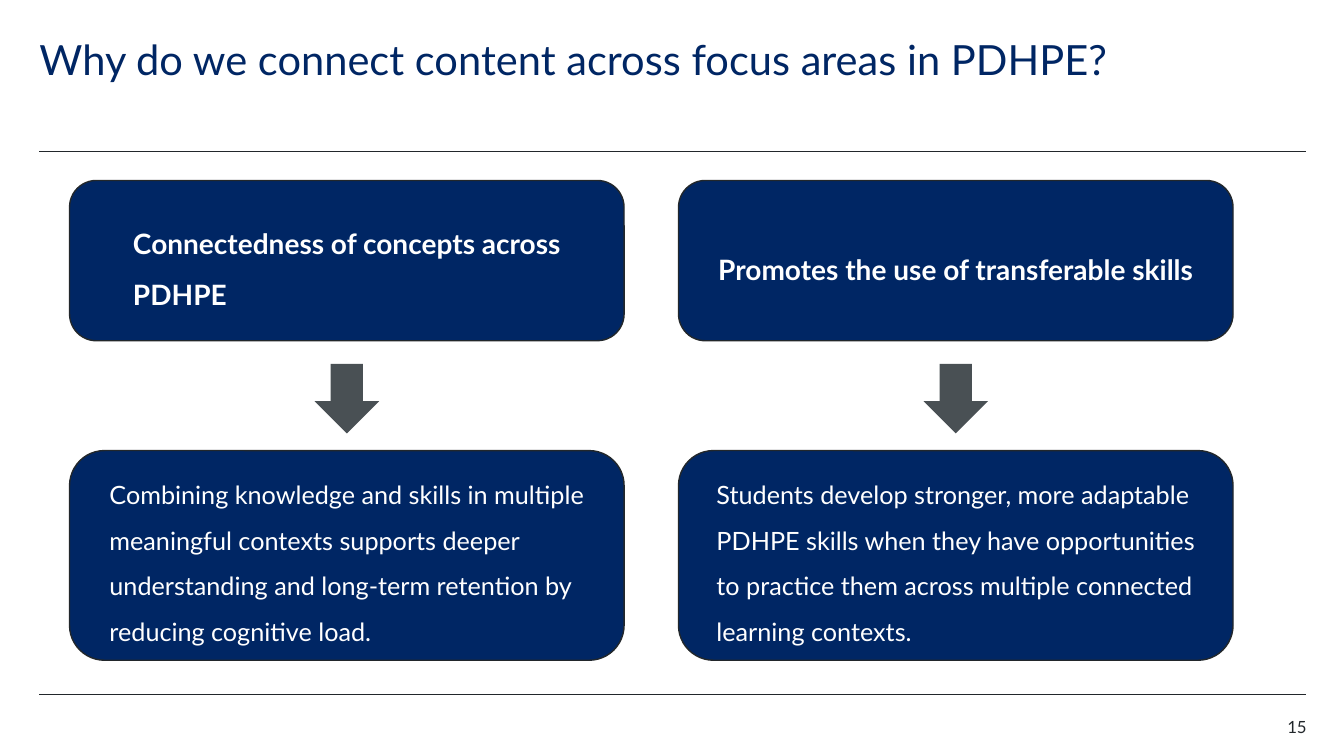
from dataclasses import dataclass

from lxml import etree
from pptx import Presentation
from pptx.dml.color import RGBColor as Rgb
from pptx.enum.shapes import MSO_CONNECTOR as Link, MSO_SHAPE as Kind
from pptx.enum.text import MSO_ANCHOR as Anchor, PP_ALIGN as Align
from pptx.oxml.ns import qn
from pptx.util import Inches, Pt


@dataclass(frozen=True)
class Theme:
    font: str = "Lato"
    navy: str = "002664"
    ink: str = "22272B"
    grey: str = "495054"
    white: str = "FFFFFF"
    title: float = 29.7
    head: float = 20
    body: float = 18
    page: float = 12


def write(frame, text, *, font, size, color, bold=False, align=Align.LEFT,
          space=0.9, after=0, pad=(0, 0), anchor=Anchor.TOP):
    """Fill a text frame with one formatted paragraph."""
    frame.word_wrap = True
    frame.vertical_anchor = anchor
    frame.margin_left = frame.margin_right = Inches(pad[0])
    frame.margin_top = frame.margin_bottom = Inches(pad[1])
    para = frame.paragraphs[0]
    para.alignment = align
    para.line_spacing = space
    para.space_after = Pt(after)
    run = para.add_run()
    run.text = text
    run.font.name = font
    run.font.size = Pt(size)
    run.font.bold = bold
    run.font.color.rgb = Rgb.from_string(color)


class Deck:
    def __init__(self, theme):
        self.theme = theme
        self.file = Presentation()
        self.file.slide_width = Inches(13.33)
        self.file.slide_height = Inches(7.5)
        self.slide = self.file.slides.add_slide(self.file.slide_layouts[6])

    def rule(self, left, right, y):
        line = self.slide.shapes.add_connector(
            Link.STRAIGHT, Inches(left), Inches(y), Inches(right), Inches(y))
        line.line.color.rgb = Rgb.from_string(self.theme.ink)
        line.line.width = Pt(0.5)
        etree.SubElement(line._element.spPr, qn("a:effectLst"))

    def label(self, text, at, **style):
        box = self.slide.shapes.add_textbox(*map(Inches, at))
        write(box.text_frame, text, font=self.theme.font, **style)

    def shape(self, kind, at, fill):
        item = self.slide.shapes.add_shape(kind, *map(Inches, at))
        item.shadow.inherit = False
        item.fill.solid()
        item.fill.fore_color.rgb = Rgb.from_string(fill)
        return item

    def card(self, text, at, **style):
        card = self.shape(Kind.ROUNDED_RECTANGLE, at, self.theme.navy)
        card.line.color.rgb = Rgb.from_string(self.theme.ink)
        card.line.width = Pt(1)
        write(card.text_frame, text, font=self.theme.font,
              color=self.theme.white, space=1.5, after=12, pad=(0.17, 0.18),
              anchor=Anchor.MIDDLE, **style)
        # Centre the left-aligned block across the card
        card.text_frame._txBody.bodyPr.set("anchorCtr", "1")

    def arrow(self, at):
        arrow = self.shape(Kind.DOWN_ARROW, at, self.theme.grey)
        arrow.line.fill.background()


def main():
    theme = Theme()
    deck = Deck(theme)

    # Frame lines and title
    for y in (1.5, 6.89):
        deck.rule(0.39, 12.95, y)
    deck.label("Why do we connect content across focus areas in PDHPE?",
               (0.39, 0.39, 11.55, 0.6), size=theme.title, color=theme.navy)

    # Reason, arrow and effect in each column
    pairs = [
        ("Connectedness of concepts across PDHPE",
         "Combining knowledge and skills in multiple meaningful contexts "
         "supports deeper understanding and long-term retention by reducing "
         "cognitive load."),
        ("Promotes the use of transferable skills",
         "Students develop stronger, more adaptable PDHPE skills when they "
         "have opportunities to practice them across multiple connected "
         "learning contexts."),
    ]
    wide, tip = 5.5, 0.64
    for col, (head, body) in enumerate(pairs):
        left = 0.69 + col * 6.04
        deck.card(head, (left, 1.79, wide, 1.59), size=theme.head, bold=True)
        deck.arrow((left + (wide - tip) / 2, 3.61, tip, 0.69))
        deck.card(body, (left, 4.47, wide, 2.08), size=theme.body)

    # Page number
    deck.label("15", (12.17, 7.13, 0.79, 0.2), size=theme.page,
               color=theme.ink, align=Align.RIGHT, after=6)

    deck.file.save("out.pptx")


if __name__ == "__main__":
    main()
